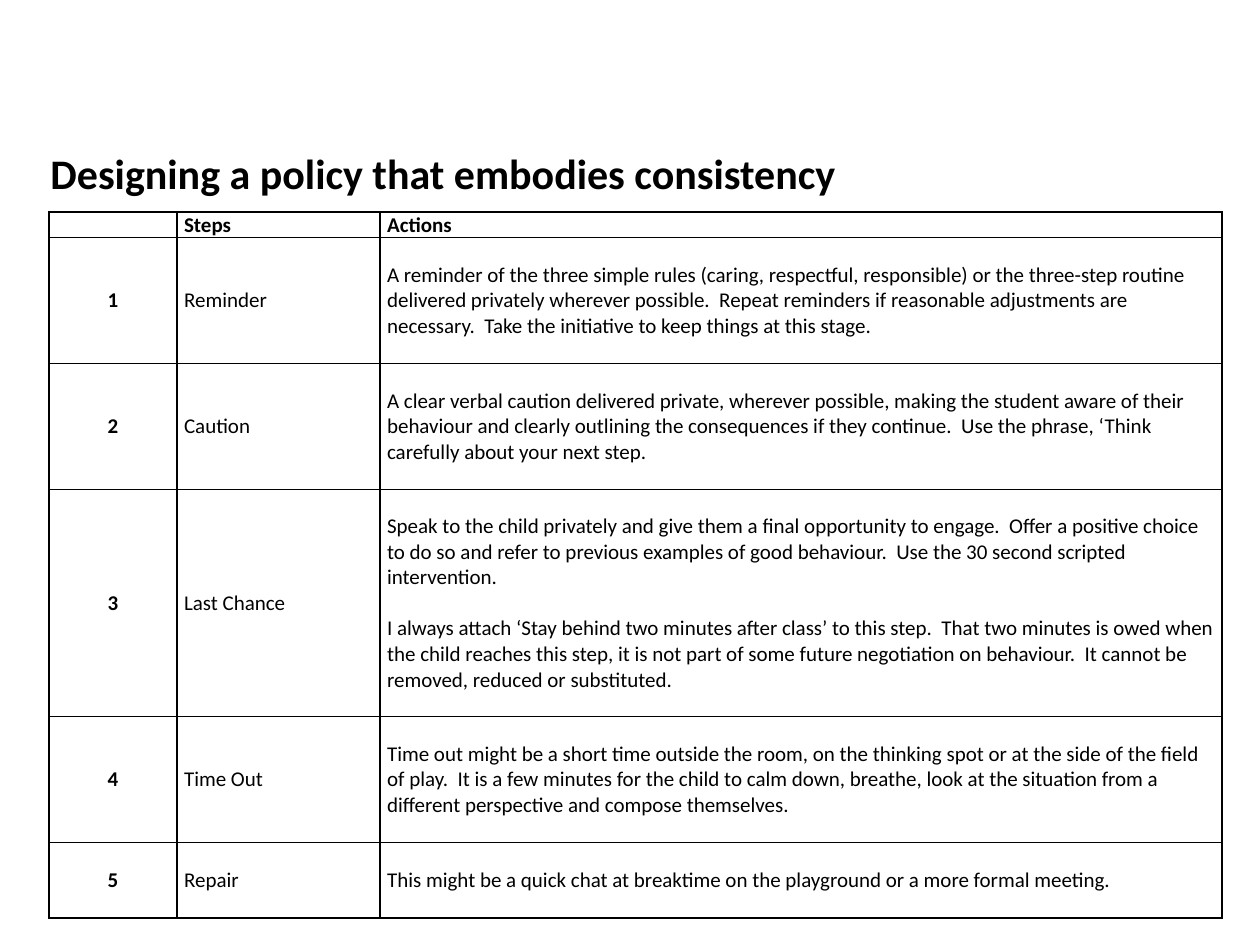
from lxml.etree import SubElement
from pptx import Presentation
from pptx.dml.color import RGBColor
from pptx.enum.text import MSO_ANCHOR, MSO_AUTO_SIZE, PP_ALIGN
from pptx.oxml.ns import qn
from pptx.util import Pt

COLORS = {"ink": "000000", "paper": "FFFFFF"}
FONT = "Calibri"
SIZE = 12
LINE = 14.6
WIDTHS = (73.2, 116, 481.1)
HEADS = ("", "Steps", "Actions")
# Name, paragraphs, row height
STEPS = (
    ("Reminder", (
        "A reminder of the three simple rules (caring, respectful, responsible) or "
        "the three-step routine delivered privately wherever possible.  Repeat "
        "reminders if reasonable adjustments are necessary.  Take the initiative to "
        "keep things at this stage.",), 72),
    ("Caution", (
        "A clear verbal caution delivered private, wherever possible, making the "
        "student aware of their behaviour and clearly outlining the consequences if "
        "they continue.  Use the phrase, ‘Think carefully about your next step.",), 72),
    ("Last Chance", (
        "Speak to the child privately and give them a final opportunity to engage.  "
        "Offer a positive choice to do so and refer to previous examples of good "
        "behaviour.  Use the 30 second scripted intervention.",
        "I always attach ‘Stay behind two minutes after class’ to this step.  That "
        "two minutes is owed when the child reaches this step, it is not part of "
        "some future negotiation on behaviour.  It cannot be removed, reduced or "
        "substituted."), 129.7),
    ("Time Out", (
        "Time out might be a short time outside the room, on the thinking spot or at "
        "the side of the field of play.  It is a few minutes for the child to calm "
        "down, breathe, look at the situation from a different perspective and "
        "compose themselves.",), 72),
    ("Repair", (
        "This might be a quick chat at breaktime on the playground or a more formal "
        "meeting.",), 43),
)


def color(name):
    return RGBColor.from_string(COLORS[name])


def add_run(para, text, size=SIZE, bold=False):
    run = para.add_run()
    run.text = text
    font = run.font
    font.name, font.size, font.bold = FONT, Pt(size), bold
    font.color.rgb = color("ink")


def add_title(slide, text):
    title = slide.shapes.title
    title.left, title.top = Pt(21.6), Pt(80.6)
    title.width, title.height = Pt(520.6), Pt(36)
    frame = title.text_frame
    frame.word_wrap = True
    frame.auto_size = MSO_AUTO_SIZE.SHAPE_TO_FIT_TEXT
    para = frame.paragraphs[0]
    para.alignment = PP_ALIGN.LEFT
    add_run(para, text, 24, True)


def add_border(cell):
    props = cell._tc.get_or_add_tcPr()
    for side in ("lnL", "lnR", "lnT", "lnB"):
        line = SubElement(props, qn(f"a:{side}"), w=str(Pt(1)))
        fill = SubElement(line, qn("a:solidFill"))
        SubElement(fill, qn("a:srgbClr"), val=COLORS["ink"])


def fill_cell(cell, texts, bold=False, align=PP_ALIGN.LEFT, anchor=MSO_ANCHOR.MIDDLE):
    cell.margin_left = cell.margin_right = Pt(4)
    cell.margin_top = cell.margin_bottom = 0
    cell.vertical_anchor = anchor
    add_border(cell)
    cell.fill.solid()
    cell.fill.fore_color.rgb = color("paper")
    frame = cell.text_frame
    for i, text in enumerate(texts):
        para = frame.add_paragraph() if i else frame.paragraphs[0]
        para.alignment = align
        if i:
            para.space_before = Pt(LINE)
        if text:
            add_run(para, text, bold=bold)
        else:
            # An empty cell keeps the row low only with its own text size
            SubElement(para._p, qn("a:endParaRPr"), sz=str(SIZE * 100))


def add_steps(slide):
    heights = [LINE] + [step[2] for step in STEPS]
    frame = slide.shapes.add_table(
        len(heights), len(WIDTHS), Pt(28), Pt(121.2), Pt(sum(WIDTHS)), Pt(sum(heights)))
    table = frame.table
    table.first_row = table.horz_banding = False
    for col, width in zip(table.columns, WIDTHS):
        col.width = Pt(width)
    for row, height in zip(table.rows, heights):
        row.height = Pt(height)
    for i, head in enumerate(HEADS):
        fill_cell(table.cell(0, i), [head], bold=True, anchor=MSO_ANCHOR.TOP)
    for i, (name, texts, _) in enumerate(STEPS, 1):
        fill_cell(table.cell(i, 0), [str(i)], bold=True, align=PP_ALIGN.CENTER)
        fill_cell(table.cell(i, 1), [name])
        fill_cell(table.cell(i, 2), texts)


def main():
    deck = Presentation()
    deck.slide_width, deck.slide_height = Pt(720), Pt(540)
    slide = deck.slides.add_slide(deck.slide_layouts[5])
    add_title(slide, "Designing a policy that embodies consistency")
    add_steps(slide)
    deck.save("out.pptx")


if __name__ == "__main__":
    main()
